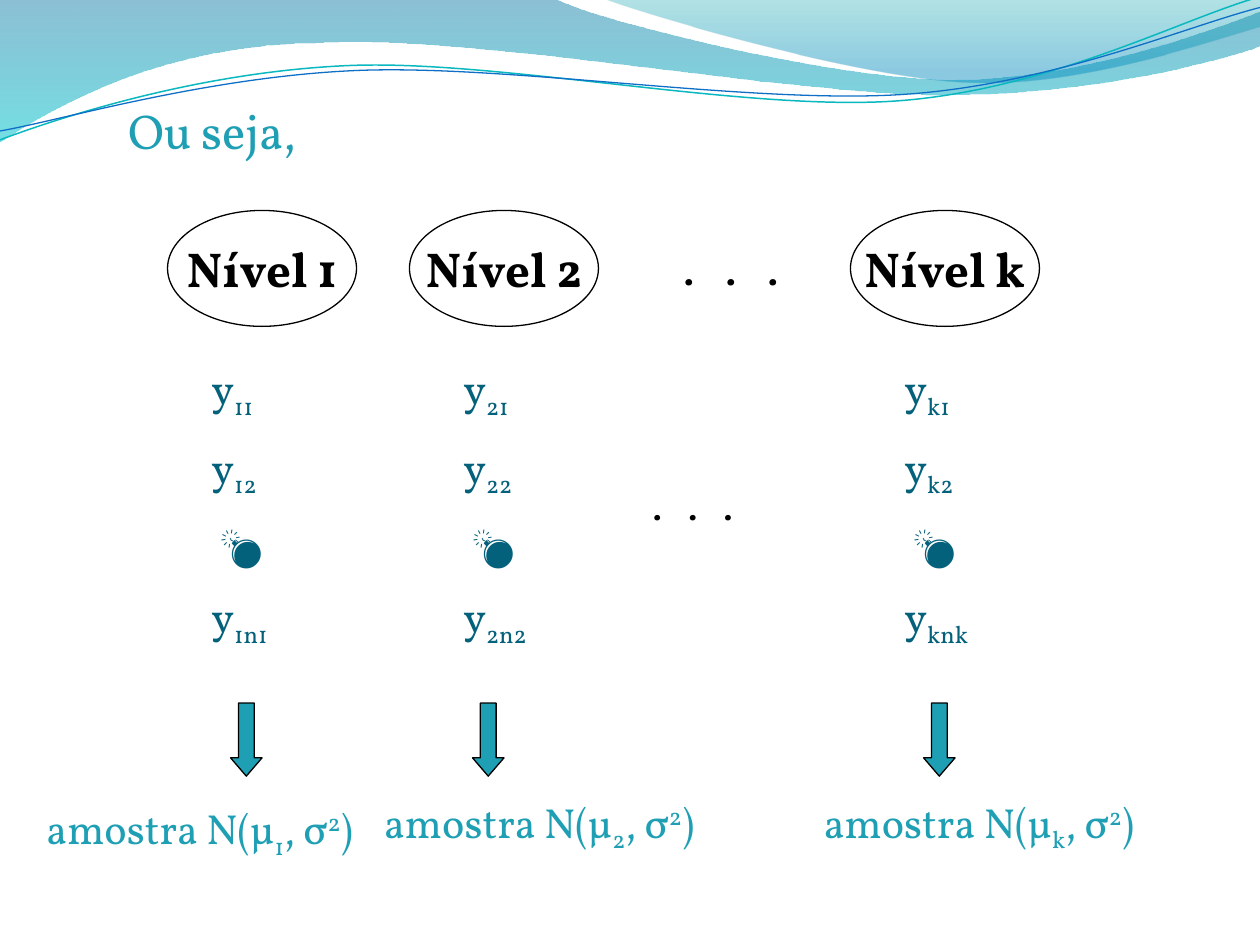
from dataclasses import dataclass
from math import cos, radians, sin

from lxml.etree import SubElement
from pptx import Presentation
from pptx.dml.color import RGBColor
from pptx.enum.shapes import MSO_SHAPE
from pptx.enum.text import MSO_ANCHOR, MSO_AUTO_SIZE, PP_ALIGN
from pptx.oxml.ns import qn
from pptx.util import Inches, Pt

FONT = "Vollkorn"
BLACK = RGBColor(0x00, 0x00, 0x00)
TEAL = RGBColor(0x1E, 0x9F, 0xB4)
DEEP_TEAL = RGBColor(0x04, 0x61, 0x7B)
LINE_CYAN = RGBColor(0x0A, 0xB8, 0xBF)
LINE_BLUE = RGBColor(0x0F, 0x6F, 0xC6)
BAND_TOP = RGBColor(0x00, 0x74, 0xA1)
BAND_BOTTOM = RGBColor(0x00, 0xC6, 0xCF)
CORNER_TOP = RGBColor(0x00, 0xA1, 0xA9)
CORNER_BOTTOM = RGBColor(0x00, 0x8B, 0xBF)

SUBSCRIPT, SUPERSCRIPT = -25, 30
WAVE_TILT = -2.7

Point = tuple[float, float]
Segment = tuple[Point, ...]  # one point: straight, three points: cubic curve
Piece = tuple[str, int]  # text, baseline shift in percent


@dataclass
class Stop:
    position: float
    color: RGBColor
    opacity: int


@dataclass
class Level:
    name: str
    ellipse_left: float
    values_left: float
    values_width: float
    arrow_left: float
    sample_left: float
    sample_top: float
    sample_width: float


LEVELS = [
    Level("1", 1.33, 1.58, 1.08, 1.83, 0.27, 6.32, 3.3),
    Level("2", 3.25, 3.58, 1, 3.75, 2.95, 6.27, 2.99),
    Level("k", 6.75, 7.08, 1.25, 7.33, 6.44, 6.27, 2.97),
]


def add_outline(page, segments: list[Segment], close: bool):
    """Draw segments, the first of which is the start; curves become cubic Béziers."""
    emu = [(Inches(x), Inches(y)) for segment in segments for x, y in segment]
    builder = page.shapes.build_freeform(*emu[0])
    builder.add_line_segments(emu[1:], close=close)
    shape = builder.convert_to_shape()
    shape.shadow.inherit = False
    lines = iter(list(shape._element.iter(qn("a:lnTo"))))
    for segment in segments[1:]:
        steps = [next(lines) for _ in segment]
        if len(steps) == 3:
            curve = steps[0].makeelement(qn("a:cubicBezTo"))
            steps[0].addprevious(curve)
            for step in steps:
                curve.append(step[0])
                step.getparent().remove(step)
    return shape


def add_band(page, segments: list[Segment], stops: list[Stop]) -> None:
    band = add_outline(page, segments, close=True)
    band.line.fill.background()
    band.fill.gradient()
    band.fill.gradient_angle = 270
    for target, stop in zip(band.fill.gradient_stops, stops):
        target.position = stop.position
        target.color.rgb = stop.color
    for color, stop in zip(band._element.spPr.iter(qn("a:srgbClr")), stops):
        SubElement(color, qn("a:alpha")).set("val", str(stop.opacity * 1000))


def add_wave(page, segments: list[Segment], center: Point, color: RGBColor, width: float) -> None:
    """Draw a line levelled about its center, then tilted back by rotation."""
    cosine, sine = cos(radians(-WAVE_TILT)), sin(radians(-WAVE_TILT))

    def level_out(point: Point) -> Point:
        dx, dy = point[0] - center[0], point[1] - center[1]
        return center[0] + dx * cosine - dy * sine, center[1] + dx * sine + dy * cosine

    wave = add_outline(page, [tuple(map(level_out, segment)) for segment in segments], close=False)
    wave.rotation = WAVE_TILT
    wave.fill.background()
    wave.line.color.rgb = color
    wave.line.width = Pt(width)


def add_span(para, text: str, size: int, color: RGBColor, shift: int = 0, bold: bool = False):
    span = para.add_run()
    span.text = text
    span.font.name = FONT
    span.font.size = Pt(size)
    span.font.color.rgb = color
    if bold:
        span.font.bold = True
    if shift:
        span._r.get_or_add_rPr().set("baseline", str(shift * 1000))
    return span


def add_text(page, left: float, top: float, width: float, height: float,
             lines: list[list[Piece]], size: int, color: RGBColor, tracking: float = 0) -> None:
    """Add a text box; tracking is extra letter spacing in points."""
    box = page.shapes.add_textbox(Inches(left), Inches(top), Inches(width), Inches(height))
    frame = box.text_frame
    frame.word_wrap = True
    frame.auto_size = MSO_AUTO_SIZE.SHAPE_TO_FIT_TEXT
    for index, pieces in enumerate(lines):
        para = frame.add_paragraph() if index else frame.paragraphs[0]
        before = SubElement(para._p.get_or_add_pPr(), qn("a:spcBef"))
        SubElement(before, qn("a:spcPct")).set("val", "50000")
        for text, shift in pieces:
            span = add_span(para, text, size, color, shift)
            if tracking:
                span._r.get_or_add_rPr().set("spc", str(round(tracking * 100)))


def add_preset(page, kind: MSO_SHAPE, left: float, top: float, width: float, height: float):
    shape = page.shapes.add_shape(kind, Inches(left), Inches(top), Inches(width), Inches(height))
    shape.shadow.inherit = False
    shape.line.color.rgb = BLACK
    shape.line.width = Pt(0.75)
    return shape


def add_level(page, level: Level) -> None:
    ellipse = add_preset(page, MSO_SHAPE.OVAL, level.ellipse_left, 1.67, 1.5, 0.92)
    ellipse.fill.background()
    frame = ellipse.text_frame
    frame.word_wrap = False
    frame.vertical_anchor = MSO_ANCHOR.MIDDLE
    para = frame.paragraphs[0]
    para.alignment = PP_ALIGN.CENTER
    add_span(para, f"Nível {level.name}", 28, BLACK, bold=True)

    first, second, last = (
        [("y", 0), (level.name + index, SUBSCRIPT)] for index in ("1", "2", "n" + level.name)
    )
    add_text(page, level.values_left, 2.83, level.values_width, 2.32,
             [first, second, [(" 💣", 0)], last], 24, DEEP_TEAL)

    arrow = add_preset(page, MSO_SHAPE.DOWN_ARROW, level.arrow_left, 5.58, 0.25, 0.58)
    arrow.adjustments[1] = 0.58
    arrow.fill.solid()
    arrow.fill.fore_color.rgb = TEAL

    sample = [("amostra N(μ", 0), (level.name, SUBSCRIPT), (", σ", 0), ("2", SUPERSCRIPT), (")", 0)]
    add_text(page, level.sample_left, level.sample_top, level.sample_width, 0.5,
             [sample], 24, TEAL)


def add_header(page) -> None:
    add_band(page, [
        ((0, -0.01),), ((4.4, -0.01),),
        ((4.76, 0.17), (6.64, 0.63), (7.58, 0.63)),
        ((8.53, 0.63), (9.58, 0.26), (10, 0.09)),
        ((10.01, 0.36),),
        ((9.83, 0.44), (8.7, 0.76), (7.46, 0.75)),
        ((6.22, 0.75), (3.82, 0.28), (2.57, 0.34)),
        ((1.29, 0.35), (0.46, 0.83), (-0.01, 1.13)),
    ], [Stop(0, BAND_TOP, 45), Stop(1, BAND_BOTTOM, 55)])
    add_band(page, [
        ((4.79, -0.01),),
        ((5.09, 0.11), (6.82, 0.62), (7.69, 0.65)),
        ((8.56, 0.69), (9.61, 0.32), (10, 0.21)),
        ((10, 0),),
    ], [Stop(0, CORNER_TOP, 30), Stop(0.8, CORNER_BOTTOM, 45)])
    add_wave(page, [
        ((0, 1.11),),
        ((0.48, 0.93), (1.58, 0.57), (2.77, 0.52)),
        ((3.95, 0.47), (5.93, 0.89), (7.13, 0.8)),
        ((8.33, 0.71), (9.38, 0.15), (9.98, -0.02)),
    ], (4.99, 0.58), LINE_CYAN, 0.85)
    add_wave(page, [
        ((0, 1.04),),
        ((0.47, 0.96), (1.64, 0.61), (2.83, 0.56)),
        ((4.03, 0.51), (5.97, 0.83), (7.17, 0.75)),
        ((8.36, 0.67), (9.41, 0.21), (10, 0.06)),
    ], (5, 0.59), LINE_BLUE, 0.75)


def main() -> None:
    deck = Presentation()
    deck.slide_width, deck.slide_height = Inches(10), Inches(7.5)
    page = deck.slides.add_slide(deck.slide_layouts[6])
    add_header(page)
    add_text(page, 0.92, 0.75, 2.5, 0.57, [[("Ou seja,", 0)]], 28, TEAL)
    for level in LEVELS:
        add_level(page, level)
    add_text(page, 5.33, 1.83, 1.08, 0.57, [[(". . .", 0)]], 28, BLACK, tracking=5.8)
    add_text(page, 5.08, 3.75, 1.25, 0.5, [[(". . .", 0)]], 24, BLACK, tracking=4.9)
    deck.save("out.pptx")


if __name__ == "__main__":
    main()
